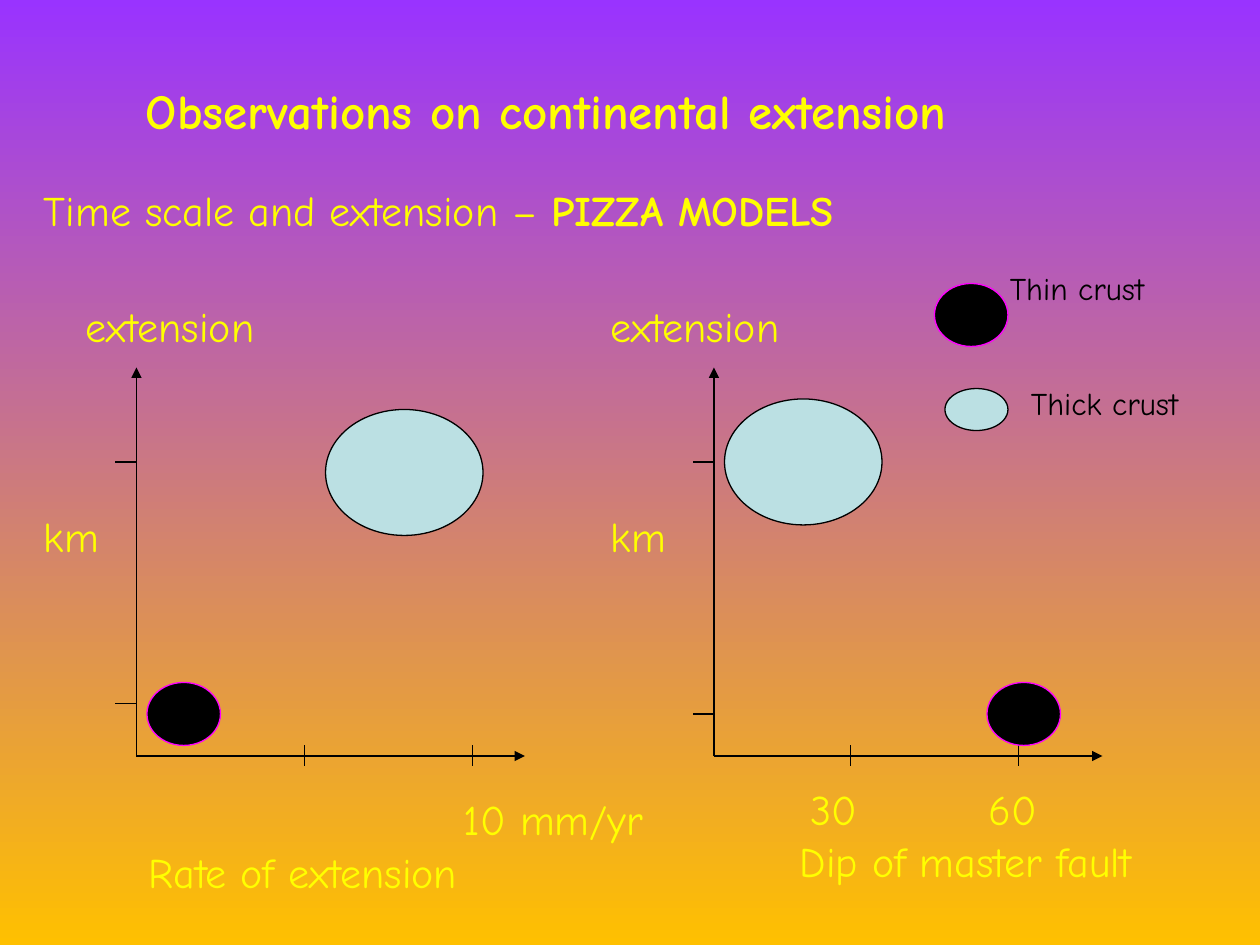
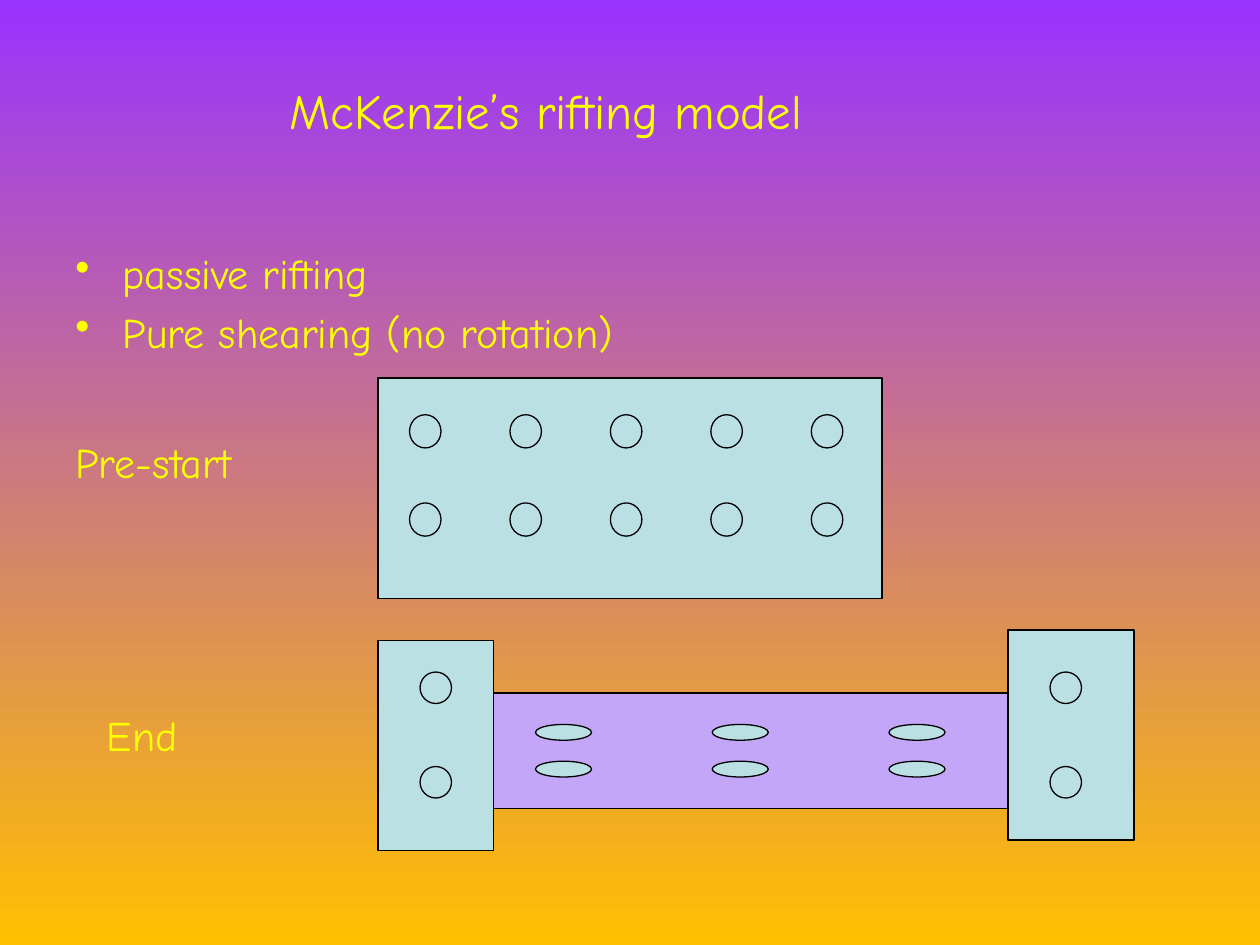
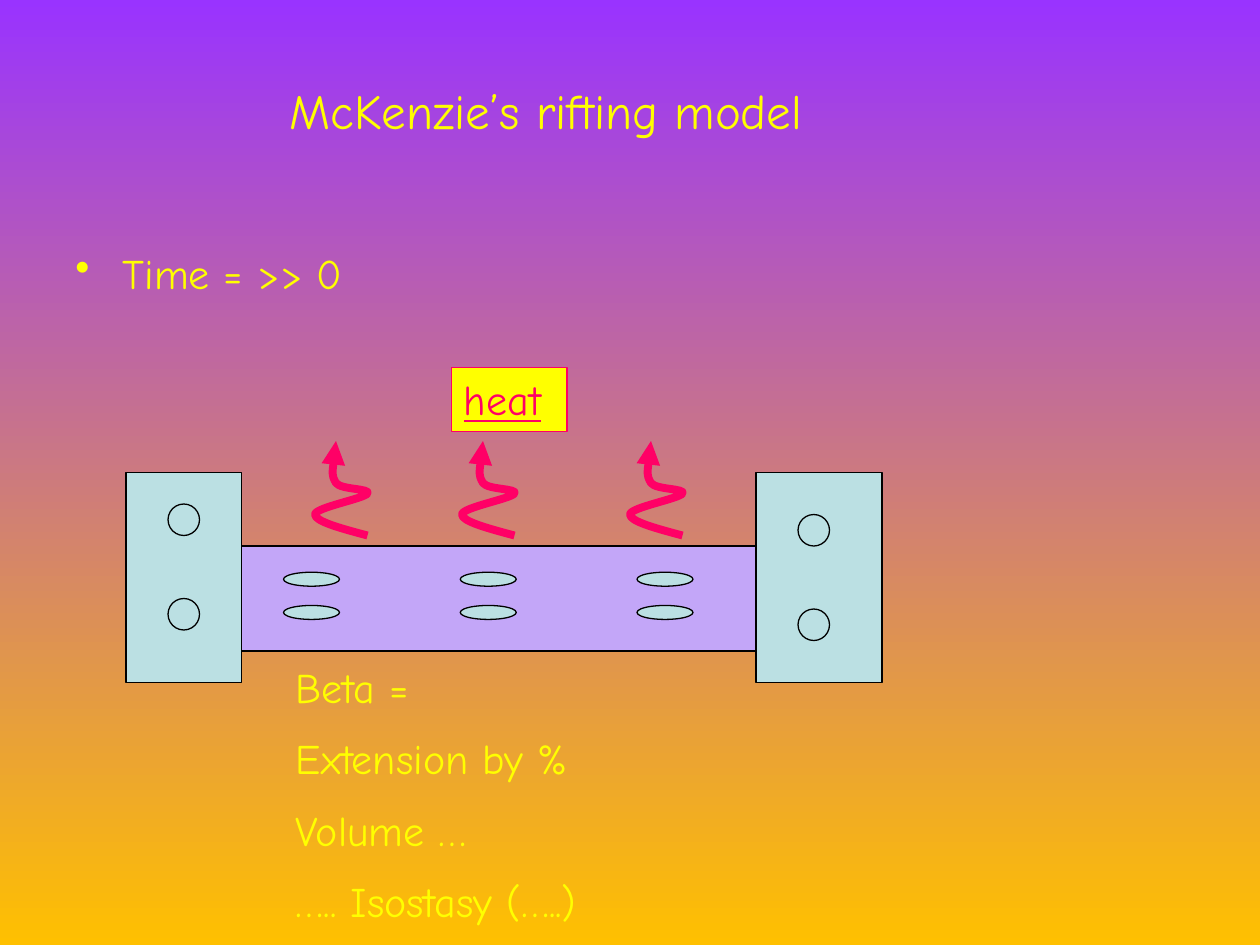
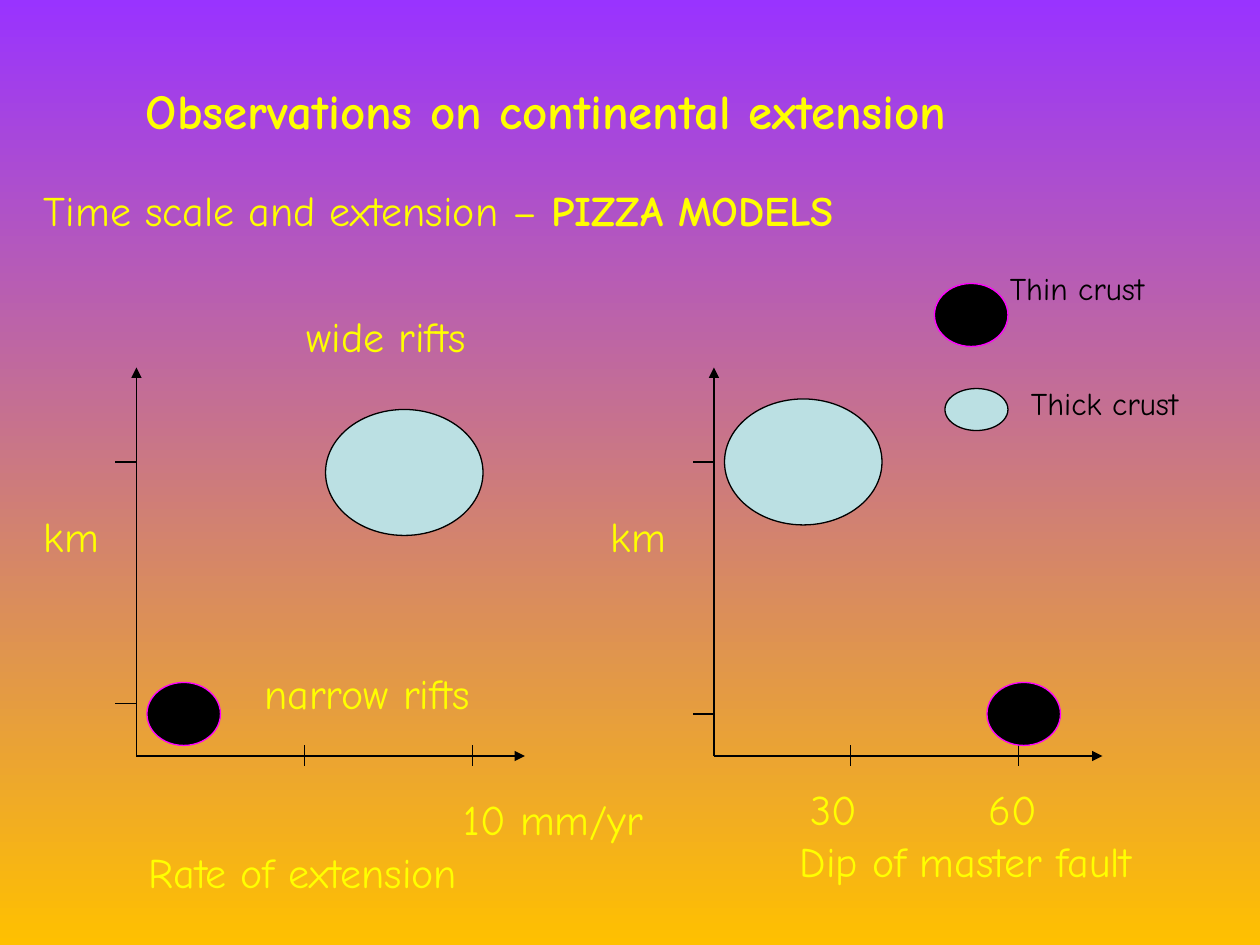
from lxml import etree
from pptx import Presentation
from pptx.dml.color import RGBColor
from pptx.enum.shapes import MSO_CONNECTOR as CONN, MSO_SHAPE as SHAPE
from pptx.enum.text import MSO_ANCHOR as ANCHOR, PP_ALIGN as ALIGN
from pptx.oxml.ns import qn
from pptx.util import Pt

YELLOW, BLACK, PINK, MAGENTA = "FFFF00", "000000", "FF0066", "FF00FF"
AQUA, LILAC, VIOLET, AMBER = "BBE0E3", "C3A6F8", "9933FF", "FFC000"
RECT, OVAL = SHAPE.RECTANGLE, SHAPE.OVAL
WAVE = [(30, 54), (15, 50), (0, 46), (0, 42), (0, 38), (28, 33), (30, 30),
        (32, 27), (15, 28), (12, 24), (9, 19), (11, 9), (12, 0)]


def rgb(color):
    return RGBColor.from_string(color)


class Deck:
    """Hold the shared style and draw elements on the current slide."""

    font = "Comic Neue"

    def __init__(self):
        self.prs = Presentation()
        self.prs.slide_width, self.prs.slide_height = Pt(720), Pt(540)
        fill = self.prs.slide_master.background.fill
        fill.gradient()
        fill.gradient_angle = 270
        for stop, color in zip(fill.gradient_stops, (VIOLET, AMBER)):
            stop.color.rgb = rgb(color)

    def slide(self, title, bold=False):
        self.s = self.prs.slides.add_slide(self.prs.slide_layouts[6])
        tf = self.text(36, 24, 552, 78, [[(title, bold)]], size=28)
        tf.vertical_anchor = ANCHOR.MIDDLE
        tf.paragraphs[0].alignment = ALIGN.CENTER

    def fill_text(self, tf, paras, size=24, color=YELLOW, gap=12, bullet=False, underline=False):
        tf.word_wrap = True
        for i, runs in enumerate(paras):
            p = tf.paragraphs[0] if i == 0 else tf.add_paragraph()
            if i:
                p.space_before = Pt(gap)
            if bullet:
                pPr = p._p.get_or_add_pPr()
                pPr.set("marL", str(Pt(27)))
                pPr.set("indent", str(-Pt(27)))
                etree.SubElement(pPr, qn("a:buChar")).set("char", "•")
            for text, bold in runs:
                r = p.add_run()
                r.text = text
                r.font.name, r.font.size = self.font, Pt(size)
                r.font.bold, r.font.underline = bold, underline
                r.font.color.rgb = rgb(color)
        return tf

    def text(self, x, y, w, h, paras, **style):
        sp = self.s.shapes.add_textbox(Pt(x), Pt(y), Pt(w), Pt(h))
        return self.fill_text(sp.text_frame, paras, **style)

    def label(self, x, y, w, text, size=24, color=YELLOW):
        self.text(x, y, w, size * 1.5, [[(text, False)]], size=size, color=color)

    def bullets(self, *items):
        self.text(36, 138, 660, 338, [[(item, False)] for item in items], gap=4.8, bullet=True)

    def shape(self, kind, x, y, w, h, fill=AQUA, line=BLACK):
        sp = self.s.shapes.add_shape(kind, Pt(x), Pt(y), Pt(w), Pt(h))
        sp.shadow.inherit = False
        sp.fill.solid()
        sp.fill.fore_color.rgb = rgb(fill)
        self.stroke(sp, line)
        return sp

    def stroke(self, sp, color, width=0.75, arrow=False):
        sp.line.color.rgb = rgb(color)
        sp.line.width = Pt(width)
        if arrow:
            etree.SubElement(sp.line._get_or_add_ln(), qn("a:tailEnd")).set("type", "triangle")

    def line(self, x1, y1, x2, y2, arrow=False):
        sp = self.s.shapes.add_connector(CONN.STRAIGHT, Pt(x1), Pt(y1), Pt(x2), Pt(y2))
        self.stroke(sp, BLACK, arrow=arrow)
        etree.SubElement(sp._element.spPr, qn("a:effectLst"))

    def ovals(self, x, y, cols, rows, dx, dy, w, h):
        for col in range(cols):
            for row in range(rows):
                self.shape(OVAL, x + col * dx, y + row * dy, w, h)

    def thin_crust(self, x, y):
        self.shape(OVAL, x, y, 42, 36, BLACK, MAGENTA)

    def heat_wave(self, x, y):
        points = [(Pt(x + px), Pt(y + py)) for px, py in WAVE]
        fb = self.s.shapes.build_freeform(*points[0])
        fb.add_line_segments(points[1:], close=False)
        sp = fb.convert_to_shape()
        sp.shadow.inherit = False
        sp.fill.background()
        self.stroke(sp, PINK, 4.5, arrow=True)
        curves = next(sp._element.iter(qn("a:path")))
        steps = curves.findall(qn("a:lnTo"))
        for i in range(0, len(steps), 3):
            curve = etree.SubElement(curves, qn("a:cubicBezTo"))
            for step in steps[i:i + 3]:
                curve.append(step[0])
                curves.remove(step)

    def axes(self, x, x_ticks, y_ticks):
        self.line(x, 432, x, 210, arrow=True)
        self.line(x, 432, x + 222, 432, arrow=True)
        for tick in x_ticks:
            self.line(tick, 426, tick, 438)
        for tick in y_ticks:
            self.line(x - 12, tick, x, tick)

    def rift(self, x, left, right, band, lens):
        for bx, (top, dots), w in ((x, left, 66), (x + 360, right, 72)):
            self.shape(RECT, bx, top, w, 120)
            self.ovals(bx + 24, dots, 1, 2, 0, 54, 18, 18)
        self.shape(RECT, x + 66, band[0], 294, band[1], LILAC)
        top, pitch, h = lens
        self.ovals(x + 90, top, 3, 2, 101, pitch, 32, h)


def extension_slide(deck, labels):
    deck.slide("Observations on continental extension", bold=True)
    deck.text(18, 102, 660, 338, [[("Time scale and extension – ", False), ("PIZZA MODELS", True)]])
    deck.axes(78, (174, 270), (264, 402))
    deck.axes(408, (486, 582), (264, 408))
    common = [(450, 474, 231, "Dip of master fault"), (78, 480, 246, "Rate of extension"),
              (258, 450, 132, "10 mm/yr"), (456, 444, 72, "30"), (558, 444, 72, "60"),
              (18, 288, 48, "km"), (342, 288, 48, "km")]
    for item in common + labels:
        deck.label(*item)
    for x, y in ((84, 390), (564, 390), (534, 162)):
        deck.thin_crust(x, y)
    for x, y, w, h in ((186, 234, 90, 72), (414, 228, 90, 72), (540, 222, 36, 24)):
        deck.shape(OVAL, x, y, w, h)
    deck.label(570, 150, 186, "Thin crust", 18, BLACK)
    deck.label(582, 216, 186, "Thick crust", 18, BLACK)


def stages_slide(deck):
    deck.slide("McKenzie’s rifting model")
    deck.bullets("passive rifting", "Pure shearing (no rotation)")
    deck.rift(216, (366, 384), (360, 384), (396, 66), (414, 21, 9))
    deck.shape(RECT, 216, 216, 288, 126)
    deck.ovals(234, 237, 5, 2, 57.4, 50.4, 18, 19)
    deck.label(36, 246, 150, "Pre-start")
    deck.label(54, 402, 120, "End")


def heat_slide(deck):
    deck.slide("McKenzie’s rifting model")
    deck.bullets("Time = >> 0")
    deck.rift(72, (270, 288), (270, 294), (312, 60), (327, 19, 8))
    notes = ("Beta =", "Extension by %", "Volume …", "….. Isostasy (…..)")
    deck.text(162, 374.4, 300, 165.6, [[(note, False)] for note in notes])
    for x in (180, 264, 360):
        deck.heat_wave(x, 252)
    sp = deck.shape(RECT, 258, 210, 66, 36.6, YELLOW, PINK)
    tf = deck.fill_text(sp.text_frame, [[("heat", False)]], color=PINK, underline=True)
    tf.vertical_anchor = ANCHOR.TOP
    tf.paragraphs[0].alignment = ALIGN.LEFT


def main():
    deck = Deck()
    extension_slide(deck, [(42, 168, 122, "extension"), (342, 168, 122, "extension")])
    stages_slide(deck)
    heat_slide(deck)
    extension_slide(deck, [(168, 174, 150, "wide rifts"), (144, 378, 198, "narrow rifts")])
    deck.prs.save("out.pptx")


if __name__ == "__main__":
    main()
